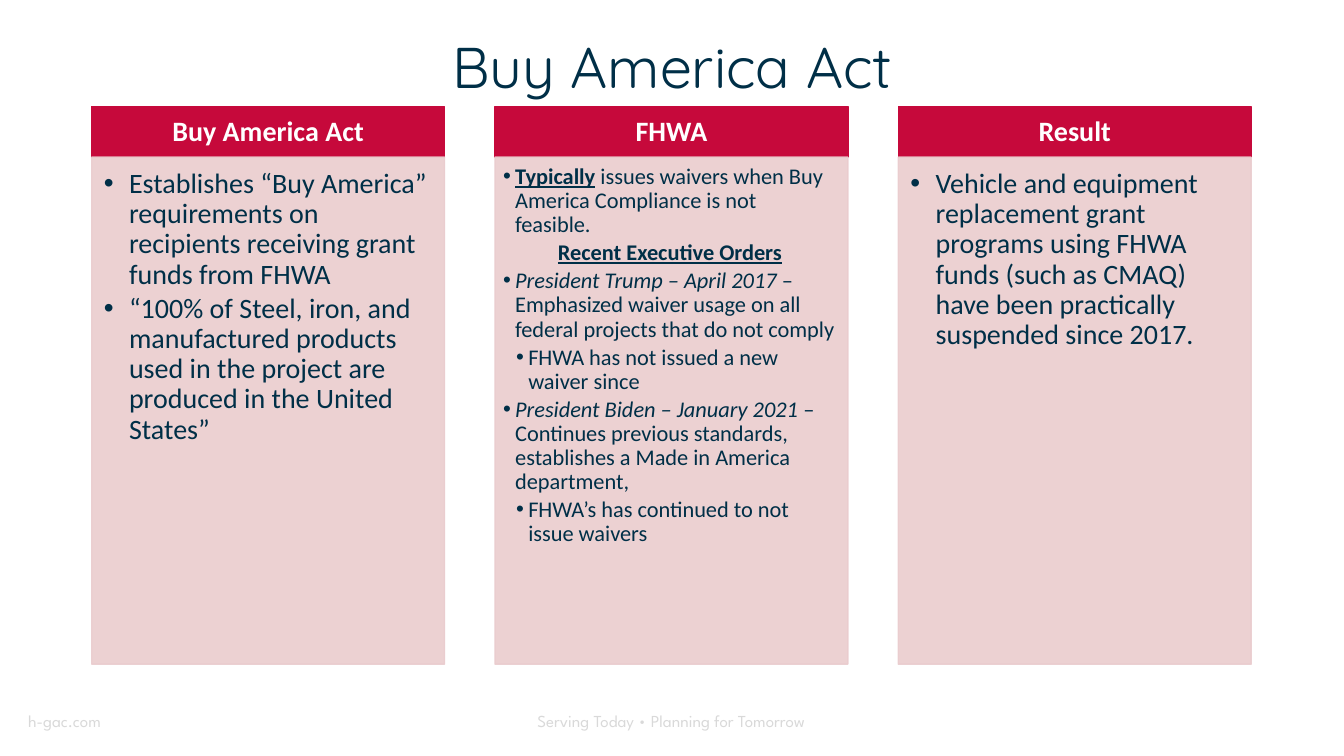
from lxml import etree
from pptx import Presentation
from pptx import util as u
from pptx.dml.color import RGBColor
from pptx.enum import shapes, text
from pptx.oxml.ns import qn

PX = 9144  # 100 px to the inch
NAVY = RGBColor(0x00, 0x2F, 0x47)
CRIMSON = RGBColor(0xC6, 0x09, 0x3B)
ROSE = RGBColor(0xEA, 0xCC, 0xCE)
WHITE = RGBColor(0xFF, 0xFF, 0xFF)
GREY = RGBColor(0xD9, 0xD9, 0xD9)

COLUMN_LEFT, COLUMN_PITCH, COLUMN_WIDTH = 91, 400, 350
HEADER_TOP, HEADER_HEIGHT, BODY_HEIGHT = 106, 50, 503

# Each paragraph is (kind, lead, lead style, rest).
COLUMNS = [
    ("Buy America Act", 20, [
        ("bullet", "", "", "Establishes “Buy America” requirements on recipients "
                           "receiving grant funds from FHWA"),
        ("bullet", "", "", "“100% of Steel, iron, and manufactured products used in "
                           "the project are produced in the United States”"),
    ]),
    ("FHWA", 16, [
        ("bullet", "Typically", "strong",
         " issues waivers when Buy America Compliance is not feasible."),
        ("heading", "Recent Executive Orders", "strong", ""),
        ("bullet", "President Trump – April 2017 ", "italic",
         "–Emphasized waiver usage on all federal projects that do not comply"),
        ("sub-bullet", "", "", "FHWA has not issued a new waiver since"),
        ("bullet", "President Biden – January 2021 ", "italic",
         "– Continues previous standards, establishes a Made in America department,"),
        ("sub-bullet", "", "", "FHWA’s has continued to not issue waivers"),
    ]),
    ("Result", 20, [
        ("bullet", "", "", "Vehicle and equipment replacement grant programs using FHWA "
                           "funds (such as CMAQ) have been practically suspended since 2017."),
    ]),
]


class SlideBuilder:
    heading_font, body_font, footer_font = "Quicksand", "Calibri", "League Spartan"

    def __init__(self, deck):
        self.slide = deck.slides.add_slide(deck.slide_layouts[5])

    def format_text(self, paragraph, font, size, color, bold=False):
        for run in paragraph.runs:
            run.font.name, run.font.size = font, u.Pt(size)
            run.font.color.rgb, run.font.bold = color, bold

    def set_margins(self, frame, left, top, right, bottom):
        frame.margin_left, frame.margin_top = left * PX, top * PX
        frame.margin_right, frame.margin_bottom = right * PX, bottom * PX

    def title(self, words, left, top, width, height):
        title = self.slide.shapes.title
        title.left, title.top = left * PX, top * PX
        title.width, title.height = width * PX, height * PX
        frame = title.text_frame
        frame.text = words
        frame.auto_size = text.MSO_AUTO_SIZE.NONE
        frame.vertical_anchor = text.MSO_ANCHOR.MIDDLE
        line = frame.paragraphs[0]
        line.alignment, line.line_spacing = text.PP_ALIGN.CENTER, 0.9
        self.format_text(line, self.heading_font, 41, NAVY)

    def footer(self, words, left, top, width, height, align):
        frame = self.slide.shapes.add_textbox(
            left * PX, top * PX, width * PX, height * PX).text_frame
        frame.word_wrap = True
        frame.text = words
        frame.paragraphs[0].alignment = align
        self.format_text(frame.paragraphs[0], self.footer_font, 12, GREY)

    def panel(self, left, top, height, color, alpha=None):
        panel = self.slide.shapes.add_shape(
            shapes.MSO_SHAPE.RECTANGLE, left * PX, top * PX, COLUMN_WIDTH * PX, height * PX)
        panel.shadow.inherit = False
        panel.fill.solid()
        panel.fill.fore_color.rgb = color
        panel.line.color.rgb = color
        panel.line.width = u.Pt(1)
        if alpha:
            for tint in panel.element.spPr.iter(qn("a:srgbClr")):
                etree.SubElement(tint, qn("a:alpha"), val=str(alpha * 1000))
        panel.text_frame.word_wrap = True
        return panel.text_frame

    def header(self, words, left):
        frame = self.panel(left, HEADER_TOP, HEADER_HEIGHT, CRIMSON)
        self.set_margins(frame, 11, 6, 11, 6)
        frame.vertical_anchor = text.MSO_ANCHOR.MIDDLE
        frame.text = words
        line = frame.paragraphs[0]
        line.alignment, line.line_spacing = text.PP_ALIGN.CENTER, 0.9
        self.format_text(line, self.body_font, 20, WHITE, bold=True)

    def body(self, paragraphs, size, left):
        frame = self.panel(left, HEADER_TOP + HEADER_HEIGHT, BODY_HEIGHT, ROSE, alpha=90)
        large = size == 20
        self.set_margins(frame, *((12, 12, 16, 17) if large else (8, 8, 11, 12)))
        frame.vertical_anchor = text.MSO_ANCHOR.TOP
        hang = 25 if large else 12
        for index, (kind, lead, style, rest) in enumerate(paragraphs):
            paragraph = frame.add_paragraph() if index else frame.paragraphs[0]
            paragraph.text = lead or rest
            if lead and rest:
                paragraph.add_run().text = rest
            paragraph.line_spacing, paragraph.space_after = 0.9, u.Pt(2.7)
            paragraph.level = 2 if kind == "sub-bullet" else 1
            if kind == "heading":
                paragraph.alignment = text.PP_ALIGN.CENTER
                self.indent(paragraph, 0, 0)
            else:
                paragraph.alignment = text.PP_ALIGN.LEFT
                self.indent(paragraph, 25 if kind == "sub-bullet" else hang, hang)
            self.format_text(paragraph, self.body_font, size, NAVY)
            lead_font = paragraph.runs[0].font
            if style == "strong":
                lead_font.bold = lead_font.underline = True
            elif style == "italic":
                lead_font.italic = True

    def indent(self, paragraph, margin, hang):
        """Set the left margin, with a bullet hung before it when hang is not zero."""
        properties = paragraph._p.get_or_add_pPr()
        properties.set("marL", str(margin * PX))
        properties.set("indent", str(-hang * PX))
        if hang:
            etree.SubElement(properties, qn("a:buFont"), typeface="Arial")
            etree.SubElement(properties, qn("a:buChar"), char="•")
        else:
            etree.SubElement(properties, qn("a:buNone"))


def main():
    deck = Presentation()
    deck.slide_width, deck.slide_height = 1333 * PX, 750 * PX
    builder = SlideBuilder(deck)
    builder.footer("h-gac.com", 18, 700, 311, 35, text.PP_ALIGN.LEFT)
    builder.footer("Serving Today • Planning for Tomorrow", 361, 700, 610, 30,
                   text.PP_ALIGN.CENTER)
    builder.title("Buy America Act", 92, 32, 1150, 74)
    for index, (heading, size, paragraphs) in enumerate(COLUMNS):
        left = COLUMN_LEFT + index * COLUMN_PITCH
        builder.header(heading, left)
        builder.body(paragraphs, size, left)
    deck.save("out.pptx")


if __name__ == "__main__":
    main()
